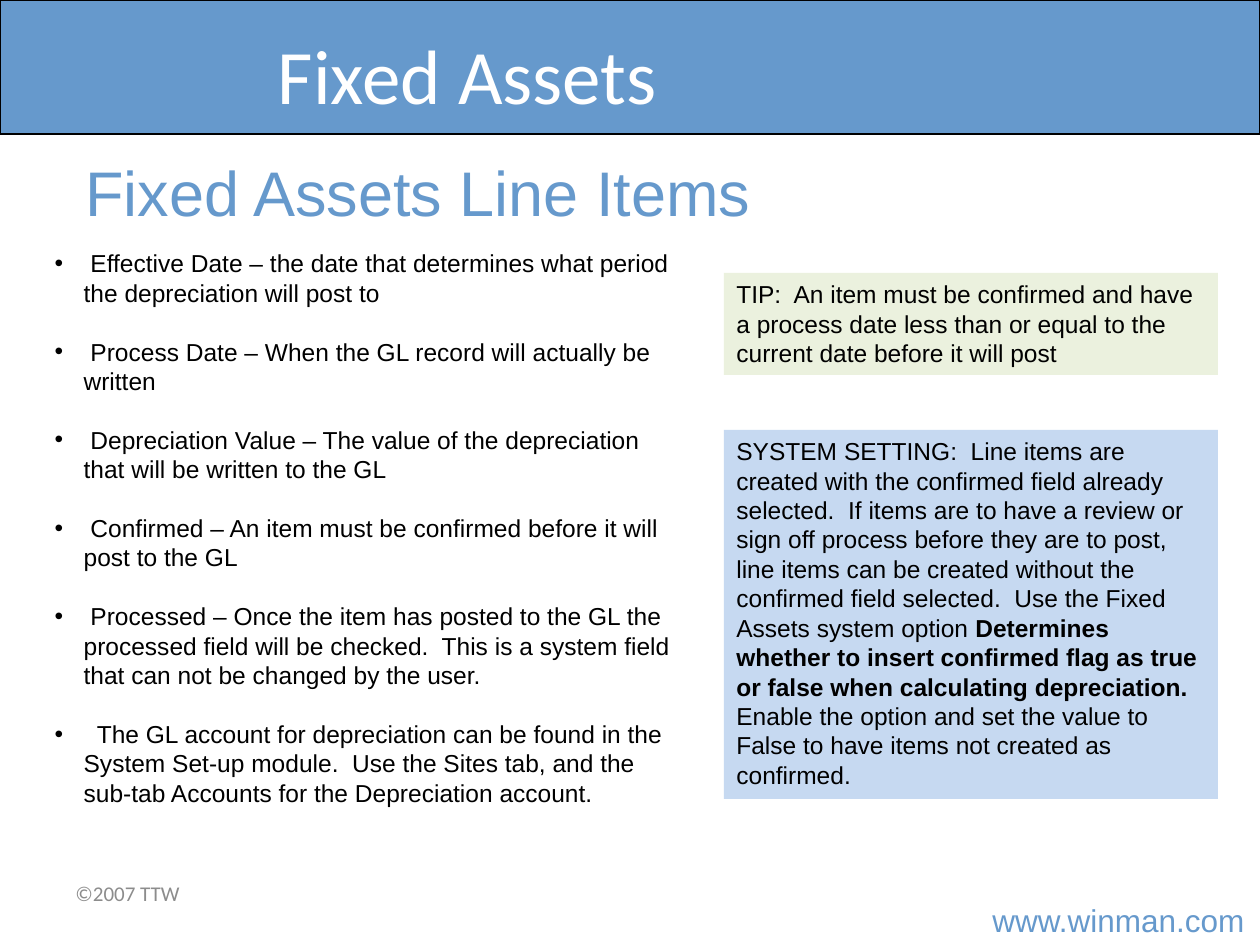
from dataclasses import dataclass

from lxml import etree
from pptx import Presentation
from pptx.dml.color import RGBColor
from pptx.enum.shapes import MSO_SHAPE
from pptx.enum.text import MSO_ANCHOR, MSO_AUTO_SIZE, PP_ALIGN
from pptx.oxml.ns import qn
from pptx.util import Emu, Pt

RECTANGLE = MSO_SHAPE.RECTANGLE
TOP, MIDDLE = MSO_ANCHOR.TOP, MSO_ANCHOR.MIDDLE
LEFT, CENTER = PP_ALIGN.LEFT, PP_ALIGN.CENTER
NO_AUTOFIT = MSO_AUTO_SIZE.NONE
PX_PER_INCH = 126


def px(length: int) -> Emu:
    return Emu(round(length * 914400 / PX_PER_INCH))


@dataclass(frozen=True)
class Style:
    size: int
    font: str
    color: str


@dataclass(frozen=True)
class Theme:
    blue: str = "6699CC"
    black: str = "000000"
    tip_fill: str = "EBF1DE"
    setting_fill: str = "C6D9F1"
    title: Style = Style(44, "Calibri", "FFFFFF")
    subtitle: Style = Style(36, "Arial", "6699CC")
    body: Style = Style(14, "Arial", "000000")
    website: Style = Style(18, "Arial", "6699CC")
    copyright: Style = Style(12, "Calibri", "8C8C8C")
    item_gap: float = 16.8


@dataclass(frozen=True)
class Box:
    left: int
    top: int
    width: int
    height: int

    def emu(self) -> tuple[Emu, ...]:
        return px(self.left), px(self.top), px(self.width), px(self.height)


@dataclass(frozen=True)
class Label:
    text: str
    box: Box
    style: Style
    anchor: MSO_ANCHOR = TOP
    wrap: bool = True


@dataclass(frozen=True)
class Callout:
    box: Box
    fill: str
    phrases: tuple[tuple[str, bool], ...]


THEME = Theme()

LABELS = (
    Label("Fixed Assets Line Items", Box(73, 147, 966, 89), THEME.subtitle),
    Label("©2007 TTW", Box(63, 861, 294, 65), THEME.copyright, anchor=MIDDLE),
    Label("www.winman.com", Box(980, 895, 280, 50), THEME.website, wrap=False),
)

LINE_ITEM_FIELDS = (
    " Effective Date – the date that determines what period the depreciation will post to",
    " Process Date – When the GL record will actually be written",
    " Depreciation Value – The value of the depreciation that will be written to the GL",
    " Confirmed – An item must be confirmed before it will post to the GL",
    " Processed – Once the item has posted to the GL the processed field will be checked.  "
    "This is a system field that can not be changed by the user.",
    "  The GL account for depreciation can be found in the System Set-up module.  "
    "Use the Sites tab, and the sub-tab Accounts for the Depreciation account.",
)

CALLOUTS = (
    Callout(Box(724, 273, 494, 102), THEME.tip_fill, (
        ("TIP:  An item must be confirmed and have a process date less than or equal "
         "to the current date before it will post", False),
    )),
    Callout(Box(724, 430, 494, 369), THEME.setting_fill, (
        ("SYSTEM SETTING:  Line items are created with the confirmed field already "
         "selected.  If items are to have a review or sign off process before they are "
         "to post, line items can be created without the confirmed field selected.  "
         "Use the Fixed Assets system option ", False),
        ("Determines whether to insert confirmed flag as true or false when "
         "calculating depreciation.  ", True),
        ("Enable the option and set the value to False to have items not created as "
         "confirmed.", False),
    )),
)


def apply_style(font, style: Style, bold: bool = False) -> None:
    font.size, font.name, font.bold = Pt(style.size), style.font, bold
    font.color.rgb = RGBColor.from_string(style.color)


def place(shape, box: Box) -> None:
    shape.left, shape.top, shape.width, shape.height = box.emu()


def prepare_frame(frame, anchor: MSO_ANCHOR = TOP, wrap: bool = True) -> None:
    frame.auto_size = NO_AUTOFIT
    frame.word_wrap = wrap
    frame.vertical_anchor = anchor


def add_rectangle(slide, box: Box, fill: str):
    rectangle = slide.shapes.add_shape(RECTANGLE, *box.emu())
    rectangle.shadow.inherit = False
    rectangle.fill.solid()
    rectangle.fill.fore_color.rgb = RGBColor.from_string(fill)
    rectangle.line.fill.background()
    return rectangle


def add_header_band(slide) -> None:
    band = add_rectangle(slide, Box(0, 0, 1260, 134), THEME.blue)
    band.line.color.rgb = RGBColor.from_string(THEME.black)
    band.line.width = Pt(0.75)
    # Send the band behind the placeholders
    slide.shapes.title._element.addprevious(band._element)


def fill_title(title, text: str) -> None:
    place(title, Box(0, 21, 935, 105))
    prepare_frame(title.text_frame, MIDDLE)
    title.text_frame.text = text
    heading = title.text_frame.paragraphs[0]
    heading.alignment = CENTER
    apply_style(heading.runs[0].font, THEME.title)


def set_bullet(paragraph, indent: int) -> None:
    properties = paragraph._p.get_or_add_pPr()
    properties.set("marL", str(px(indent)))
    properties.set("indent", str(-px(indent)))
    etree.SubElement(properties, qn("a:buFont"), typeface="Arial")
    etree.SubElement(properties, qn("a:buChar"), char="•")


def fill_list(body, items: tuple[str, ...]) -> None:
    place(body, Box(42, 242, 651, 577))
    frame = body.text_frame
    prepare_frame(frame)
    frame.text = "\n".join(items)
    for index, item in enumerate(frame.paragraphs):
        set_bullet(item, 29)
        item.space_before = Pt(THEME.item_gap if index else 0)
        apply_style(item.runs[0].font, THEME.body)


def add_label(slide, label: Label) -> None:
    frame = slide.shapes.add_textbox(*label.box.emu()).text_frame
    prepare_frame(frame, label.anchor, label.wrap)
    frame.text = label.text
    apply_style(frame.paragraphs[0].runs[0].font, label.style)


def add_callout(slide, callout: Callout) -> None:
    frame = add_rectangle(slide, callout.box, callout.fill).text_frame
    prepare_frame(frame)
    message = frame.paragraphs[0]
    message.alignment = LEFT
    for text, bold in callout.phrases:
        run = message.add_run()
        run.text = text
        apply_style(run.font, THEME.body, bold)


def main() -> None:
    deck = Presentation()
    deck.slide_width, deck.slide_height = px(1260), px(945)
    slide = deck.slides.add_slide(deck.slide_layouts[1])

    # Header
    add_header_band(slide)
    fill_title(slide.shapes.title, "Fixed Assets")

    # Field list
    fill_list(slide.placeholders[1], LINE_ITEM_FIELDS)

    # Subtitle and footer
    for label in LABELS:
        add_label(slide, label)

    # Tip and system setting
    for callout in CALLOUTS:
        add_callout(slide, callout)

    deck.save("out.pptx")


if __name__ == "__main__":
    main()
